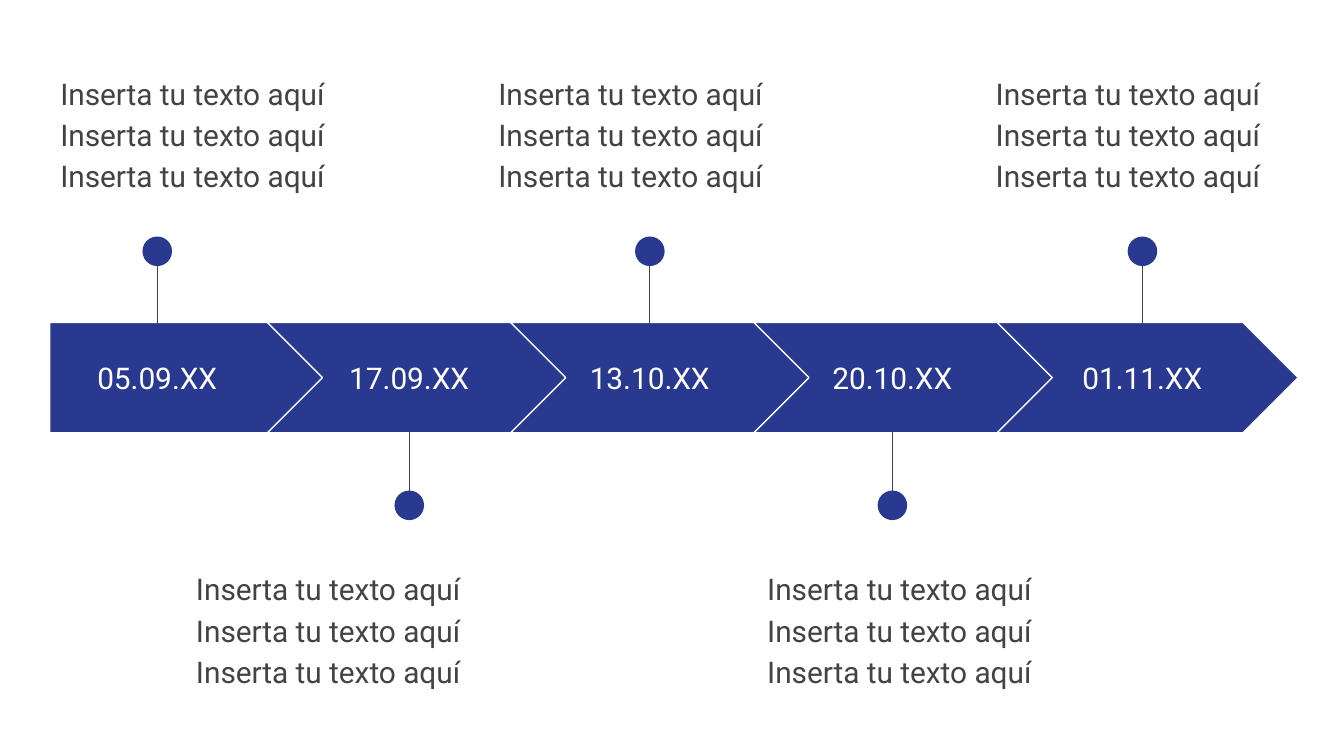
from lxml.etree import SubElement
from pptx import Presentation
from pptx.dml.color import RGBColor
from pptx.enum.shapes import MSO_CONNECTOR as Connector, MSO_SHAPE as Shape
from pptx.enum.text import MSO_ANCHOR as Anchor, PP_ALIGN as Align
from pptx.oxml.ns import qn
from pptx.util import Inches, Pt

COLORS = {"blue": "2A3990", "white": "FFFFFF", "grey": "434343"}
FONT = "Roboto"
SLIDE_WIDTH = Inches(10)
SLIDE_HEIGHT = SLIDE_WIDTH * 9 // 16
CELL = SLIDE_WIDTH / 100

BAND_TOP, BAND_HEIGHT = 24, 8.2
FIRST_LEFT, FIRST_WIDTH = 3.7, 20.5
CHEVRON_LEFT, CHEVRON_WIDTH, CHEVRON_STEP = 19.9, 22.4, 18.1
LABEL_HEIGHT = 5.1
DOT_SIZE = 2.2
NOTE_WIDTH, NOTE_HEIGHT = 24.5, 9.9
NOTE_TEXT = " ".join(["Inserta tu texto aquí"] * 3)

STAGES = [
    ("05.09.XX", 11.7, 15.9, 3.5),
    ("17.09.XX", 30.45, 14.4, 13.6),
    ("13.10.XX", 48.35, 14.4, 36.1),
    ("20.10.XX", 66.4, 14.4, 56.1),
    ("01.11.XX", 85, 14.4, 73.1),
]


def color(name):
    """Return the named palette colour."""
    return RGBColor.from_string(COLORS[name])


def grid(*cells):
    """Turn grid cells into slide lengths."""
    return [round(cell * CELL) for cell in cells]


def add_blue_shape(slide, kind, box, outline=None):
    """Place a blue preset shape in the box."""
    shape = slide.shapes.add_shape(kind, *grid(*box))
    shape.shadow.inherit = False
    shape.fill.solid()
    shape.fill.fore_color.rgb = color("blue")
    if outline:
        shape.line.color.rgb = color(outline)
        shape.line.width = Pt(0.75)
    else:
        shape.line.fill.background()
    return shape


def add_text(slide, box, text, color_name, align=Align.LEFT, anchor=Anchor.TOP):
    """Place one paragraph of text in the box."""
    frame = slide.shapes.add_textbox(*grid(*box)).text_frame
    frame.word_wrap = True
    frame.vertical_anchor = anchor
    frame.margin_left = frame.margin_right = Inches(0.1)
    frame.margin_top = frame.margin_bottom = Inches(0.1)
    paragraph = frame.paragraphs[0]
    paragraph.alignment = align
    run = paragraph.add_run()
    run.text = text
    run.font.name = FONT
    run.font.size = Pt(16)
    run.font.color.rgb = color(color_name)
    return paragraph


def add_stage(slide, kind, box, date, center, label_width):
    """Draw one arrow of the band with its date."""
    arrow = add_blue_shape(slide, kind, box, "white")
    arrow.adjustments[0] = 0.5
    top, height = box[1], box[3]
    label_top = top + (height - LABEL_HEIGHT) / 2
    label_box = (center - label_width / 2, label_top, label_width, LABEL_HEIGHT)
    add_text(slide, label_box, date, "white", Align.CENTER, Anchor.MIDDLE)


def add_pin(slide, center, dot_top, band_edge):
    """Draw a dot joined by a line to the edge of the band."""
    dot_middle = dot_top + DOT_SIZE / 2
    line = slide.shapes.add_connector(
        Connector.STRAIGHT, *grid(center, dot_middle, center, band_edge)
    )
    line.line.color.rgb = color("grey")
    line.line.width = Pt(0.75)
    SubElement(line._element.spPr, qn("a:effectLst"))
    dot_box = (center - DOT_SIZE / 2, dot_top, DOT_SIZE, DOT_SIZE)
    add_blue_shape(slide, Shape.OVAL, dot_box)


def add_note(slide, box):
    """Place the explanatory text of a stage."""
    paragraph = add_text(slide, box, NOTE_TEXT, "grey")
    paragraph.line_spacing = 1.15
    paragraph.space_after = Pt(16)


def add_timeline(slide):
    """Draw the stages, with notes alternating above and below the band."""
    for index, (date, center, label_width, note_left) in enumerate(STAGES):
        if index == 0:
            kind, left, width = Shape.PENTAGON, FIRST_LEFT, FIRST_WIDTH
        else:
            kind, width = Shape.CHEVRON, CHEVRON_WIDTH
            left = CHEVRON_LEFT + (index - 1) * CHEVRON_STEP
        if index % 2 == 0:
            note_top, dot_top, band_edge = 4.2, 17.6, BAND_TOP + 0.1
        else:
            note_top, dot_top, band_edge = 41.1, 36.5, BAND_TOP + BAND_HEIGHT - 0.1
        box = (left, BAND_TOP, width, BAND_HEIGHT)
        add_stage(slide, kind, box, date, center, label_width)
        add_pin(slide, center, dot_top, band_edge)
        add_note(slide, (note_left, note_top, NOTE_WIDTH, NOTE_HEIGHT))


def main():
    """Build and save the presentation."""
    presentation = Presentation()
    presentation.slide_width = SLIDE_WIDTH
    presentation.slide_height = SLIDE_HEIGHT
    slide = presentation.slides.add_slide(presentation.slide_layouts[6])
    add_timeline(slide)
    presentation.save("out.pptx")


if __name__ == "__main__":
    main()
